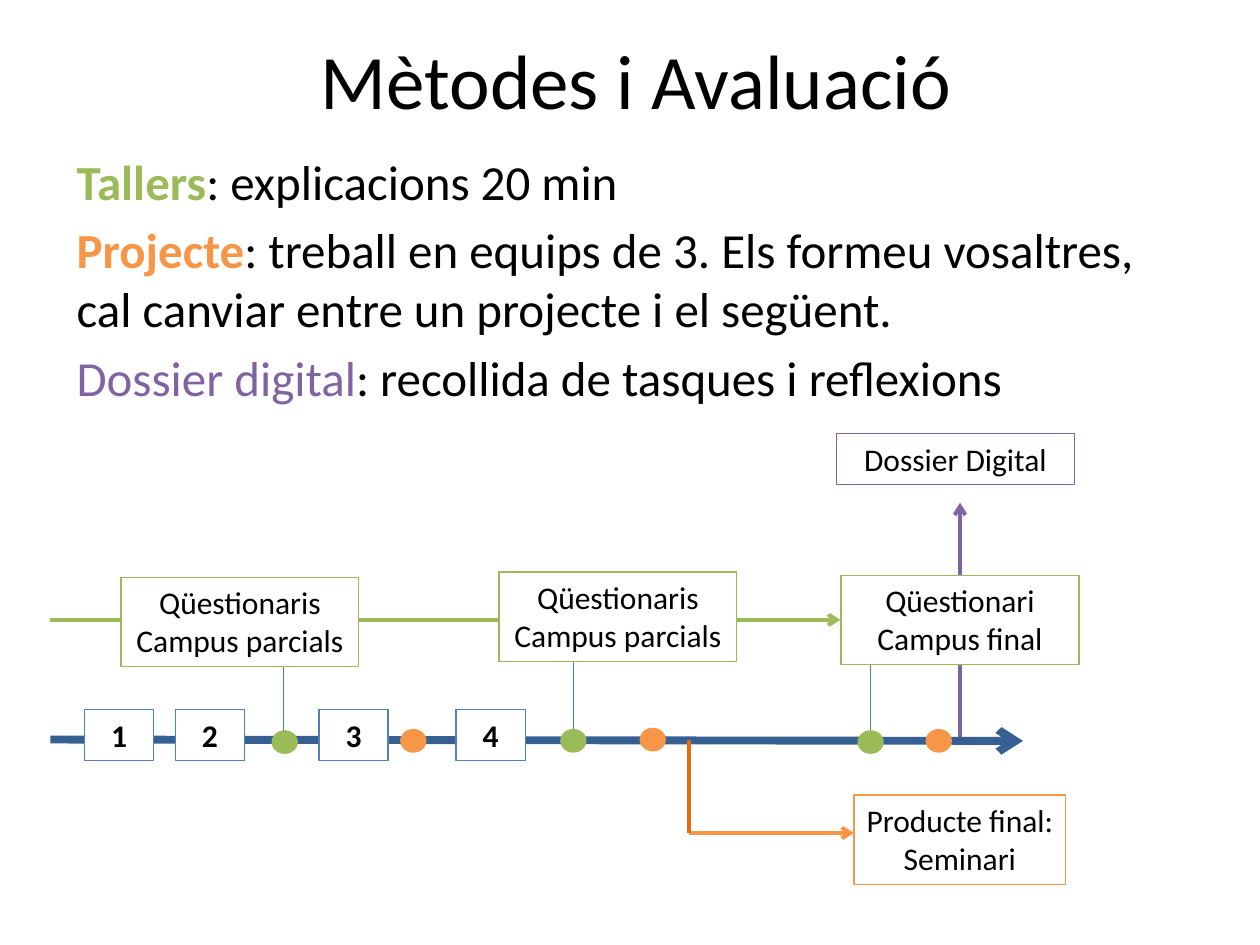
"""Builds the course methods and assessment slide with its timeline."""
from lxml.etree import SubElement
from pptx import Presentation
from pptx.dml.color import RGBColor
from pptx.enum.shapes import MSO_CONNECTOR, MSO_SHAPE
from pptx.enum.text import MSO_ANCHOR, PP_ALIGN
from pptx.oxml.ns import qn
from pptx.util import Pt

COLORS = {
    "black": "000000", "white": "FFFFFF", "green": "9BBB59",
    "orange": "F79646", "dark_orange": "E46C0A", "purple": "8064A2",
    "blue": "4F81BD", "stem": "4B7EBC", "navy": "376092",
}
FONT = "Calibri"
AXIS_Y = 423


def rgb(name):
    return RGBColor.from_string(COLORS[name])


def style_run(r, size, color="black", bold=False):
    r.font.name = FONT
    r.font.size = Pt(size)
    r.font.bold = bold
    r.font.color.rgb = rgb(color)


def add_title(s, text):
    tf = s.shapes.add_textbox(Pt(39.6), Pt(0), Pt(648), Pt(90)).text_frame
    tf.word_wrap = True
    tf.vertical_anchor = MSO_ANCHOR.MIDDLE
    tf.text = text
    p = tf.paragraphs[0]
    p.alignment = PP_ALIGN.CENTER
    style_run(p.runs[0], 44)


def add_body(s, entries):
    tf = s.shapes.add_textbox(Pt(36.72), Pt(82.8), Pt(648), Pt(229)).text_frame
    tf.word_wrap = True
    for i, (term, color, bold, text) in enumerate(entries):
        p = tf.add_paragraph() if i else tf.paragraphs[0]
        p.space_before = Pt(5.6)
        for part, c, b in ((term, color, bold), (text, "black", False)):
            r = p.add_run()
            r.text = part
            style_run(r, 28, c, b)


def add_line(s, x1, y1, x2, y2, color, width, arrow=False):
    line = s.shapes.add_connector(
        MSO_CONNECTOR.STRAIGHT, Pt(x1), Pt(y1), Pt(x2), Pt(y2))
    line.line.color.rgb = rgb(color)
    line.line.width = Pt(width)
    if arrow:
        SubElement(line.line._get_or_add_ln(), qn("a:tailEnd"), type="arrow")
    SubElement(line._element.spPr, qn("a:effectLst"))


def add_shape(s, kind, x, y, w, h, fill, outline, width):
    sp = s.shapes.add_shape(kind, Pt(x), Pt(y), Pt(w), Pt(h))
    sp.shadow.inherit = False
    sp.fill.solid()
    sp.fill.fore_color.rgb = rgb(fill)
    sp.line.color.rgb = rgb(outline)
    sp.line.width = Pt(width)
    return sp


def add_box(s, text, x, y, w, h, color, bold=False):
    sp = add_shape(s, MSO_SHAPE.RECTANGLE, x, y, w, h, "white", color, 0.75)
    tf = sp.text_frame
    tf.word_wrap = True
    tf.vertical_anchor = MSO_ANCHOR.TOP
    tf.margin_left = tf.margin_right = Pt(5)
    tf.text = text
    for p in tf.paragraphs:
        p.alignment = PP_ALIGN.CENTER
        for r in p.runs:
            style_run(r, 18, bold=bold)


def add_dot(s, x, y, color):
    add_shape(s, MSO_SHAPE.OVAL, x, y, 13, 11.5, color, color, 2)


def main():
    prs = Presentation()
    prs.slide_width, prs.slide_height = Pt(720), Pt(540)
    s = prs.slides.add_slide(prs.slide_layouts[6])

    add_title(s, "Mètodes i Avaluació")
    add_body(s, [
        ("Tallers", "green", True, ": explicacions 20 min"),
        ("Projecte", "orange", True, ": treball en equips de 3. Els formeu "
         "vosaltres, cal canviar entre un projecte i el següent."),
        ("Dossier digital", "purple", False,
         ": recollida de tasques i reflexions"),
    ])

    add_line(s, 548.6, AXIS_Y, 548.6, 287.3, "purple", 2.25, True)
    add_line(s, 393.8, 476, 488, 476, "orange", 2.25, True)
    add_line(s, 28.8, 354.2, 480.2, 354.2, "green", 2.25, True)
    add_line(s, 28.8, 422.6, 584.6, 423.4, "navy", 4.5, True)
    for x, top in ((162, 355.7), (327.6, 378), (497.5, 379.4)):
        add_line(s, x, top, x, AXIS_Y, "stem", 0.75)

    for x, y, color in (
            (156.2, 418.3, "green"), (229.7, 417.6, "orange"),
            (321.1, 417.6, "green"), (366.5, 416.9, "orange"),
            (491, 418.3, "green"), (529.9, 417.6, "orange")):
        add_dot(s, x, y, color)

    partial = "Qüestionaris Campus parcials"
    for text, x, y, w, h, color in (
            (partial, 69.1, 329.8, 136, 51, "green"),
            (partial, 285.1, 326.9, 136, 51, "green"),
            ("Qüestionari\nCampus final", 480.6, 328.7, 136, 51, "green"),
            ("Producte final: Seminari", 488, 454.3, 121, 51, "orange"),
            ("Dossier Digital", 478, 247.7, 136, 29, "purple")):
        add_box(s, text, x, y, w, h, color)
    for i, x in enumerate((48.2, 100.1, 182.2, 260.6), 1):
        add_box(s, str(i), x, 405.5, 39.6, 29, "blue", True)

    add_line(s, 393.8, AXIS_Y, 393.8, 476, "dark_orange", 2.25)
    prs.save("out.pptx")


if __name__ == "__main__":
    main()
